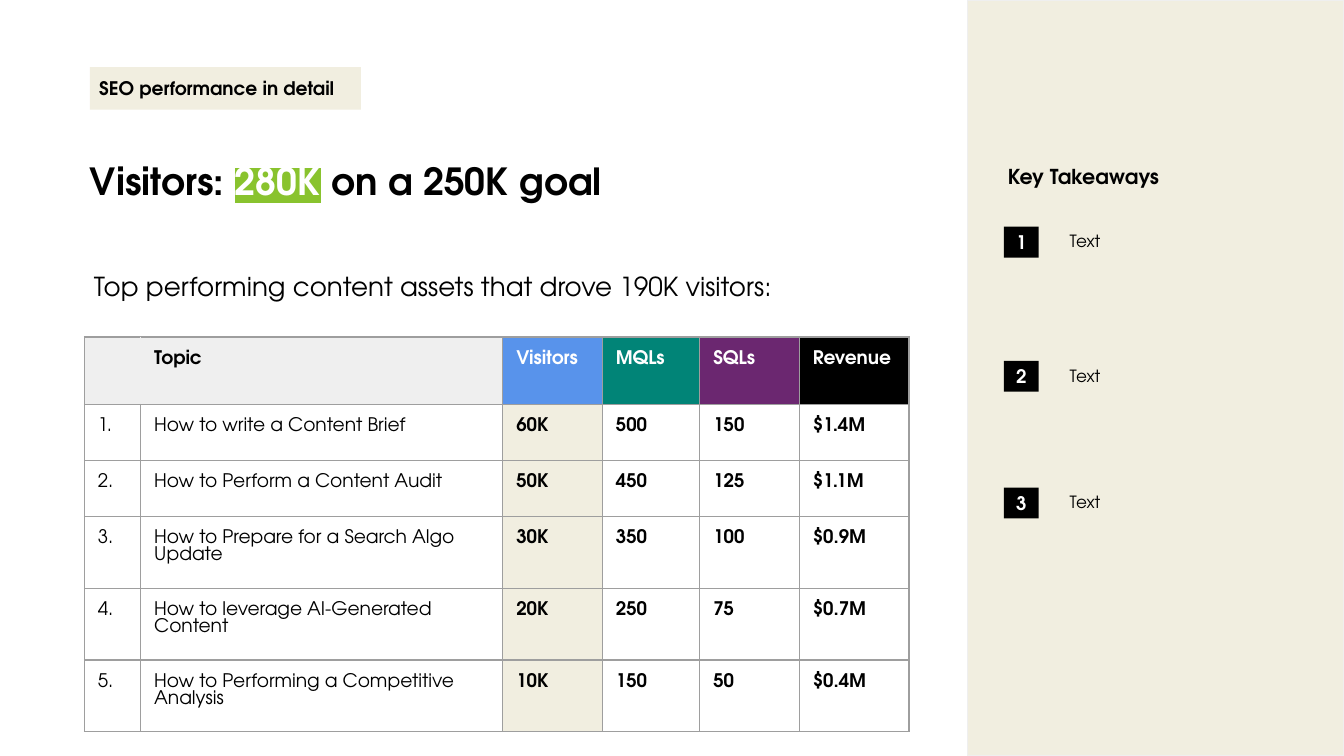
"""Build the SEO performance slide with its content table and key takeaways."""
from lxml import etree
from pptx import Presentation, util as u
from pptx.dml.color import RGBColor
from pptx.enum import shapes, text
from pptx.oxml.ns import qn

BLACK, WHITE, CREAM, GREY, RULE = "000000", "FFFFFF", "F1EEE0", "EFEFEF", "9E9E9E"


def colour(value):
    return RGBColor.from_string(value)


class SlideBuilder:
    font = "TeX Gyre Adventor"
    inset = 5
    cell_inset = 7.2
    border = 0.75

    def __init__(self, slide):
        self.slide = slide

    def add_runs(self, paragraph, runs, size):
        for words, ink, bold, highlight in runs:
            run = paragraph.add_run()
            run.text = words
            run.font.size = u.Pt(size)
            run.font.name = self.font
            run.font.bold = bold
            run.font.color.rgb = colour(ink)
            if highlight:
                mark = etree.Element(qn("a:highlight"))
                etree.SubElement(mark, qn("a:srgbClr"), val=highlight)
                run.font._element.find(qn("a:solidFill")).addnext(mark)

    def fill_frame(self, frame, runs, size, inset, after=None, align=None,
                   anchor=text.MSO_ANCHOR.TOP):
        frame.word_wrap = True
        frame.vertical_anchor = anchor
        frame.margin_left = frame.margin_right = u.Pt(inset)
        frame.margin_top = frame.margin_bottom = u.Pt(inset)
        paragraph = frame.paragraphs[0]
        paragraph.alignment = align
        if after is not None:
            paragraph.space_after = u.Pt(after)
        self.add_runs(paragraph, runs, size)

    def label(self, box, runs, size, inset=inset, grow=True, **style):
        frame = self.slide.shapes.add_textbox(*map(u.Pt, box)).text_frame
        self.fill_frame(frame, runs, size, inset, **style)
        if grow:
            frame.auto_size = text.MSO_AUTO_SIZE.SHAPE_TO_FIT_TEXT

    def block(self, box, fill, line=None, runs=(), size=10, align=None):
        block = self.slide.shapes.add_shape(shapes.MSO_SHAPE.RECTANGLE, *map(u.Pt, box))
        block.shadow.inherit = False
        block.fill.solid()
        block.fill.fore_color.rgb = colour(fill)
        if line:
            block.line.color.rgb = colour(line)
            block.line.width = u.Pt(self.border)
        else:
            block.line.fill.background()
        if runs:
            self.fill_frame(block.text_frame, runs, size, self.inset, align=align,
                            anchor=text.MSO_ANCHOR.MIDDLE)

    def cell(self, cell, words, ink, bold, fill, left=RULE, right=RULE):
        properties = cell._tc.get_or_add_tcPr()
        for side, edge in zip("LRTB", (left, right, RULE, RULE)):
            line = etree.SubElement(properties, qn(f"a:ln{side}"), w=str(u.Pt(self.border)))
            paint = etree.SubElement(line, qn("a:solidFill"))
            etree.SubElement(paint, qn("a:srgbClr"), val=edge)
        if fill:
            cell.fill.solid()
            cell.fill.fore_color.rgb = colour(fill)
        else:
            cell.fill.background()
        cell.margin_left = cell.margin_right = u.Pt(self.cell_inset)
        cell.margin_top = cell.margin_bottom = u.Pt(self.cell_inset)
        if words:
            self.add_runs(cell.text_frame.paragraphs[0], [(words, ink, bold, None)], 10)

    def table(self, left, top, widths, heights, headings, assets):
        grid = self.slide.shapes.add_table(
            len(heights), len(widths), u.Pt(left), u.Pt(top),
            u.Pt(sum(widths)), u.Pt(sum(heights))).table
        grid.first_row = grid.horz_banding = False
        for column, width in zip(grid.columns, widths):
            column.width = u.Pt(width)
        for row, height in zip(grid.rows, heights):
            row.height = u.Pt(height)
        for c, (heading, ink, fill) in enumerate(headings):
            self.cell(grid.cell(0, c), heading, ink, True, fill,
                      left=GREY if c == 1 else RULE, right=GREY if c == 0 else RULE)
        fills = (None, None, CREAM, WHITE, WHITE, None)
        for r, asset in enumerate(assets, 1):
            for c, value in enumerate((f"{r}.", *asset)):
                self.cell(grid.cell(r, c), value, BLACK, c >= 2, fills[c])


def main():
    deck = Presentation()
    deck.slide_width, deck.slide_height = u.Pt(720), u.Pt(405)
    page = SlideBuilder(deck.slides.add_slide(deck.slide_layouts[6]))

    page.block((518.4, 0, 201.6, 405), CREAM, line=GREY)
    page.block((48.2, 36, 145.2, 22.7), CREAM,
               runs=[("SEO performance in detail", BLACK, True, None)])
    page.label((43.2, 76.3, 353.5, 41), [
        ("Visitors: ", BLACK, True, None),
        ("280K", WHITE, True, "89C32E"),
        (" on a 250K goal", BLACK, True, None),
    ], 20, grow=False, anchor=text.MSO_ANCHOR.MIDDLE)
    page.label((43.2, 137.5, 442, 31.7), [
        ("Top performing content assets that drove 190K visitors:", BLACK, False, None),
    ], 14, inset=7.2)

    page.label((535, 82.8, 180, 24.5), [("Key Takeaways", BLACK, True, None)], 11, after=7)
    for number, top in enumerate((121.4, 193.3, 261.2), 1):
        page.block((537.8, top, 18.7, 16.6), BLACK,
                   runs=[(str(number), WHITE, True, None)], align=text.PP_ALIGN.CENTER)
        page.label((568.1, top - 2.6, 128.9, 21.6), [("Text", BLACK, False, None)], 9, after=7)

    headings = [
        ("", BLACK, GREY), ("Topic", BLACK, GREY), ("Visitors", WHITE, "5893EB"),
        ("MQLs", WHITE, "018477"), ("SQLs", WHITE, "6B2770"), ("Revenue", WHITE, BLACK),
    ]
    assets = [
        ("How to write a Content Brief", "60K", "500", "150", "$1.4M"),
        ("How to Perform a Content Audit", "50K", "450", "125", "$1.1M"),
        ("How to Prepare for a Search Algo Update", "30K", "350", "100", "$0.9M"),
        ("How to leverage AI-Generated Content", "20K", "250", "75", "$0.7M"),
        ("How to Performing a Competitive Analysis", "10K", "150", "50", "$0.4M"),
    ]
    page.table(45.2, 180.6, (30.2, 194, 53.4, 52.2, 53.3, 58.8),
               (36, 30, 30, 38.4, 38.4, 38.4), headings, assets)
    deck.save("out.pptx")


if __name__ == "__main__":
    main()
